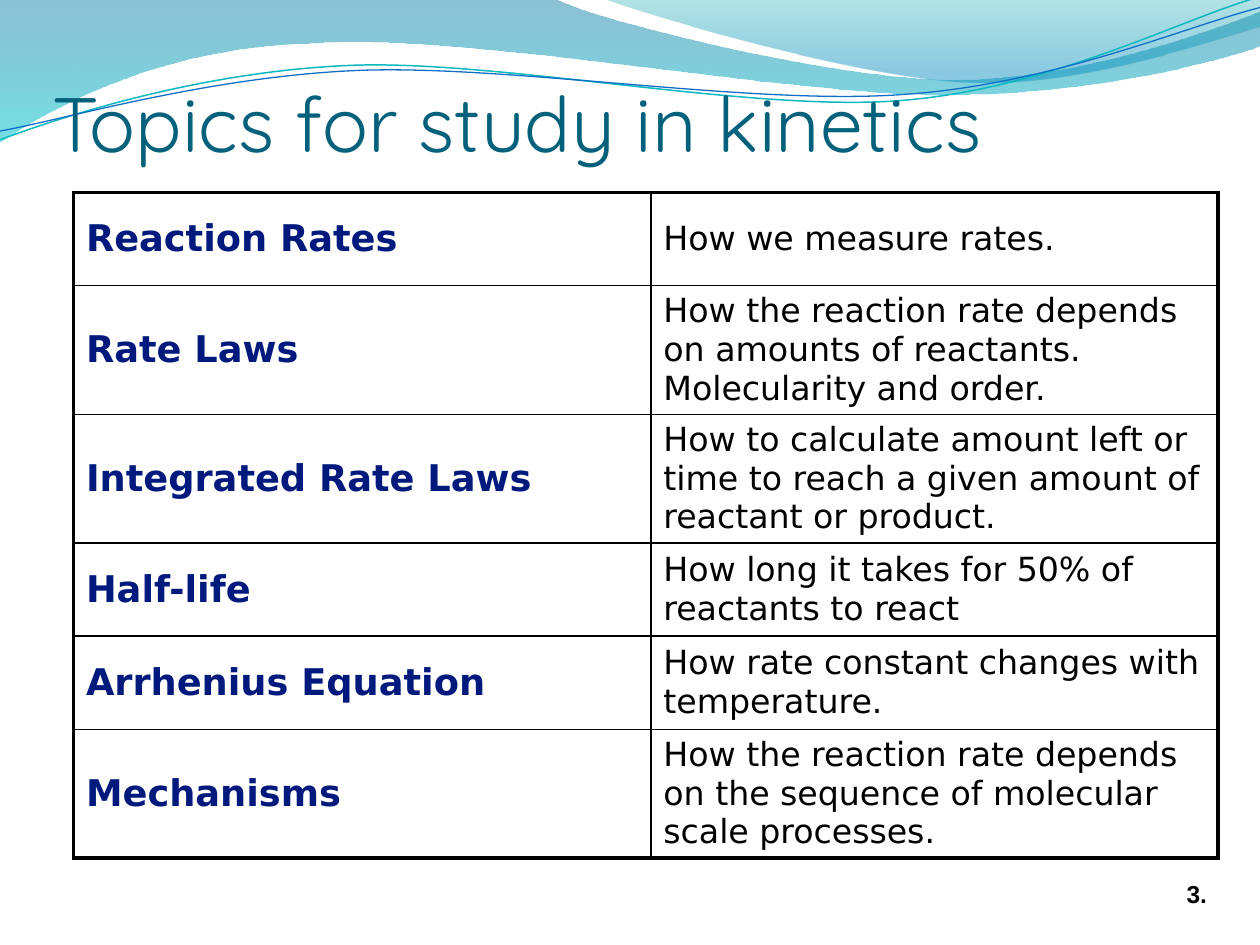
from lxml.etree import SubElement
from pptx import Presentation
from pptx.dml.color import RGBColor
from pptx.enum.text import MSO_ANCHOR as Anchor, MSO_AUTO_SIZE as AutoSize, PP_ALIGN as Align
from pptx.oxml.ns import qn
from pptx.util import Cm, Pt

BLACK = RGBColor(0x00, 0x00, 0x00)
NAVY = RGBColor(0x00, 0x19, 0x7D)
TITLE_TEAL = RGBColor(0x04, 0x61, 0x7B)
DEEP_BLUE = RGBColor(0x00, 0x74, 0xA1)
CYAN = RGBColor(0x00, 0xC6, 0xCF)
SEA_GREEN = RGBColor(0x00, 0xA1, 0xA9)
SKY_BLUE = RGBColor(0x00, 0x8B, 0xBF)
LINE_TEAL = RGBColor(0x0A, 0xB8, 0xBF)
LINE_BLUE = RGBColor(0x0F, 0x6F, 0xC6)

TITLE = "Topics for study in kinetics"
PAGE_NUMBER = "3."
TOPICS = [
    ("Reaction Rates", "How we measure rates."),
    ("Rate Laws", "How the reaction rate depends on amounts of reactants. Molecularity and order."),
    ("Integrated Rate Laws",
     "How to calculate amount left or time to reach a given amount of reactant or product."),
    ("Half-life", "How long it takes for 50% of reactants to react"),
    ("Arrhenius Equation", "How rate constant changes with temperature."),
    ("Mechanisms", "How the reaction rate depends on the sequence of molecular scale processes."),
]
COLUMN_WIDTHS = (11.64, 11.43)
COLUMN_STYLES = ((21, NAVY, True), (19, BLACK, False))
ROW_HEIGHT = 1.88

WAVE_BANDS = [
    {"outline": [(0, 0), (4.4, -0.01),
                 (4.76, 0.17, 6.64, 0.63, 7.58, 0.63), (8.53, 0.63, 9.58, 0.26, 10, 0.09),
                 (10.01, 0.36),
                 (9.83, 0.44, 8.7, 0.76, 7.46, 0.75), (6.22, 0.75, 3.82, 0.28, 2.57, 0.34),
                 (1.29, 0.36, 0.46, 0.83, -0.01, 1.13)],
     "stops": [(0, DEEP_BLUE, 45), (1, CYAN, 55)]},
    {"outline": [(4.79, -0.01),
                 (5.09, 0.11, 6.82, 0.62, 7.69, 0.65), (8.56, 0.69, 9.61, 0.32, 10, 0.21),
                 (10, 0)],
     "stops": [(0, SEA_GREEN, 30), (0.8, SKY_BLUE, 45)]},
]
WAVE_LINES = [
    {"outline": [(0, 1.11),
                 (0.48, 0.93, 1.58, 0.57, 2.77, 0.52), (3.95, 0.47, 5.93, 0.89, 7.13, 0.8),
                 (8.33, 0.71, 9.38, 0.15, 9.98, -0.02)],
     "color": LINE_TEAL, "width": 0.85},
    {"outline": [(0, 1.04),
                 (0.47, 0.96, 1.64, 0.61, 2.83, 0.56), (4.03, 0.51, 5.97, 0.84, 7.17, 0.75),
                 (8.36, 0.67, 9.41, 0.21, 10, 0.06)],
     "color": LINE_BLUE, "width": 0.75},
]
CM_PER_INCH = 2.54


def bend_segments(shape, segments):
    lines = iter(list(shape._element.iter(qn("a:lnTo"))))
    for segment in segments:
        first = next(lines)
        if len(segment) == 6:
            first.tag = qn("a:cubicBezTo")
            for line in (next(lines), next(lines)):
                first.append(line[0])
                line.getparent().remove(line)


def add_wave(slide, outline, close):
    points = [(Cm(x * CM_PER_INCH), Cm(y * CM_PER_INCH))
              for segment in outline for x, y in zip(segment[::2], segment[1::2])]
    builder = slide.shapes.build_freeform(*points[0])
    builder.add_line_segments(points[1:], close=close)
    shape = builder.convert_to_shape()
    bend_segments(shape, outline[1:])
    shape.shadow.inherit = False
    return shape


def add_band(slide, outline, stops):
    shape = add_wave(slide, outline, True)
    shape.line.fill.background()
    shape.fill.gradient()
    shape.fill.gradient_angle = 270
    for stop, (position, color, opacity) in zip(shape.fill.gradient_stops, stops):
        stop.position = position
        stop.color.rgb = color
    colors = list(shape._element.spPr.iter(qn("a:srgbClr")))
    for element, (position, color, opacity) in zip(colors, stops):
        SubElement(element, qn("a:alpha"), val=str(opacity * 1000))


def add_wave_line(slide, outline, color, width):
    shape = add_wave(slide, outline, False)
    shape.fill.background()
    shape.line.color.rgb = color
    shape.line.width = Pt(width)


def add_run(paragraph, text, font_name, size, color, bold=False):
    run = paragraph.add_run()
    run.text = text
    run.font.name = font_name
    run.font.size = Pt(size)
    run.font.bold = bold
    run.font.color.rgb = color


def set_borders(cell, widths):
    properties = cell._tc.get_or_add_tcPr()
    for side, width in zip("LRTB", widths):
        line = SubElement(properties, qn(f"a:ln{side}"), w=str(Pt(width)))
        fill = SubElement(line, qn("a:solidFill"))
        SubElement(fill, qn("a:srgbClr"), val=str(BLACK))


def add_topic_table(slide):
    row_count, column_count = len(TOPICS), len(COLUMN_WIDTHS)
    table = slide.shapes.add_table(row_count, column_count, Cm(1.48), Cm(3.88),
                                   Cm(sum(COLUMN_WIDTHS)), Cm(ROW_HEIGHT * row_count)).table
    table.first_row = False
    table.horz_banding = False
    for column, width in zip(table.columns, COLUMN_WIDTHS):
        column.width = Cm(width)
    for row, topic in enumerate(TOPICS):
        table.rows[row].height = Cm(ROW_HEIGHT)
        for column, (text, style) in enumerate(zip(topic, COLUMN_STYLES)):
            cell = table.cell(row, column)
            cell.vertical_anchor = Anchor.MIDDLE
            outer_sides = (column == 0, column == column_count - 1, row == 0, row == row_count - 1)
            set_borders(cell, [2.25 if outer else 1 for outer in outer_sides])
            cell.fill.background()
            add_run(cell.text_frame.paragraphs[0], text, "DejaVu Sans", *style)


def place_title(slide):
    title = slide.shapes.title
    slide.shapes._spTree.append(title._element)
    title.left, title.top, title.width, title.height = Cm(1.06), Cm(0.84), Cm(21.79), Cm(2.54)
    frame = title.text_frame
    frame.auto_size = AutoSize.NONE
    frame.vertical_anchor = Anchor.BOTTOM
    frame.margin_left = frame.margin_right = frame.margin_bottom = 0
    frame.margin_top = Cm(0.13)
    frame.paragraphs[0].alignment = Align.LEFT
    add_run(frame.paragraphs[0], TITLE, "Quicksand", 44, TITLE_TEAL)


def add_page_number(slide):
    frame = slide.shapes.add_textbox(Cm(23.67), Cm(17.6), Cm(0.91), Cm(0.84)).text_frame
    frame.word_wrap = False
    frame.auto_size = AutoSize.NONE
    frame.margin_right = 0
    add_run(frame.paragraphs[0], PAGE_NUMBER, "Arial", 14, BLACK, True)


def main():
    presentation = Presentation()
    presentation.slide_width, presentation.slide_height = Cm(25.4), Cm(19.05)
    slide = presentation.slides.add_slide(presentation.slide_layouts[5])
    for band in WAVE_BANDS:
        add_band(slide, **band)
    for line in WAVE_LINES:
        add_wave_line(slide, **line)
    place_title(slide)
    add_topic_table(slide)
    add_page_number(slide)
    presentation.save("out.pptx")


if __name__ == "__main__":
    main()
